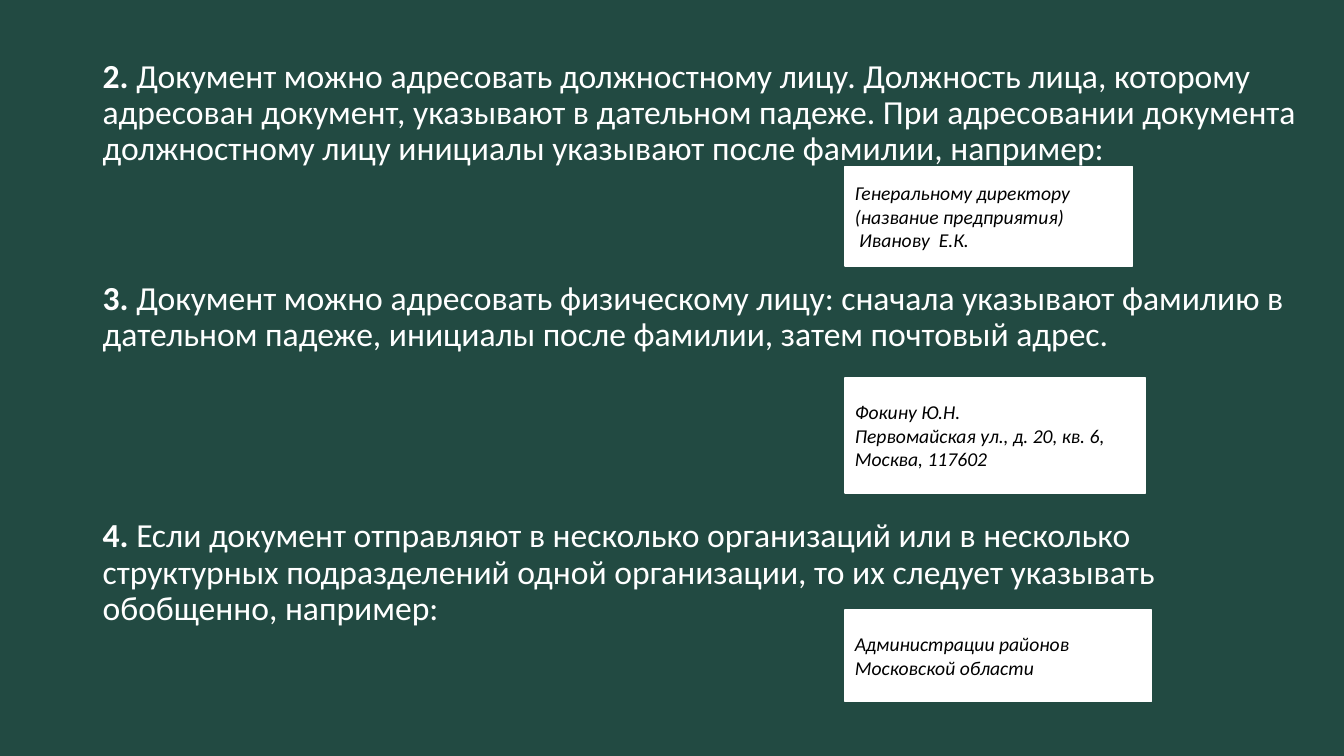
from pptx import Presentation
from pptx.dml.color import RGBColor
from pptx.enum.shapes import MSO_SHAPE
from pptx.enum.text import MSO_ANCHOR, PP_ALIGN
from pptx.util import Inches, Pt

RECT = MSO_SHAPE.RECTANGLE
TOP, MIDDLE = MSO_ANCHOR.TOP, MSO_ANCHOR.MIDDLE
LEFT = PP_ALIGN.LEFT
FONT = "Calibri"
COLORS = {"board": "224A42", "white": "FFFFFF", "black": "000000"}

RULE_2 = ("2.", " Документ можно адресовать должностному лицу. Должность лица, "
          "которому адресован документ, указывают в дательном падеже. "
          "При адресовании документа должностному лицу инициалы указывают "
          "после фамилии, например:")
RULE_3 = ("3.", " Документ можно адресовать физическому лицу: сначала указывают "
          "фамилию в дательном падеже, инициалы после фамилии, затем почтовый адрес.")
RULE_4 = ("4.", " Если документ отправляют в несколько организаций или в несколько "
          "структурных подразделений одной организации, то их следует указывать "
          "обобщенно, например:")

EXAMPLE_LEFT = 8.38
EXAMPLES = [
    (1.65, 2.85, 0.99, "Генеральному директору\n(название предприятия)\n Иванову  Е.К."),
    (3.75, 2.98, 1.14, "Фокину Ю.Н.\nПервомайская ул., д. 20, кв. 6,\nМосква, 117602"),
    (6.05, 3.04, 0.91, "Администрации районов\nМосковской области"),
]


def rgb(name):
    return RGBColor.from_string(COLORS[name])


def style(r, size, color, bold=False, italic=False):
    f = r.font
    f.name, f.size, f.bold, f.italic = FONT, Pt(size), bold, italic
    f.color.rgb = rgb(color)


def add_rules(s, x, y, w, h, rules, anchor, gap=0):
    tf = s.shapes.add_textbox(Inches(x), Inches(y), Inches(w), Inches(h)).text_frame
    tf.word_wrap = True
    tf.vertical_anchor = anchor
    for i, (number, wording) in enumerate(rules):
        p = tf.add_paragraph() if i else tf.paragraphs[0]
        p.line_spacing = 0.9
        p.space_before = Pt(gap if i else 0)
        for text, bold in ((number, True), (wording, False)):
            r = p.add_run()
            r.text = text
            style(r, 24, "white", bold=bold)


def add_example(s, x, y, w, h, text):
    sp = s.shapes.add_shape(RECT, Inches(x), Inches(y), Inches(w), Inches(h))
    sp.shadow.inherit = False
    sp.fill.solid()
    sp.fill.fore_color.rgb = rgb("white")
    sp.line.color.rgb = rgb("white")
    sp.line.width = Pt(1)
    tf = sp.text_frame
    tf.word_wrap = True
    tf.vertical_anchor = MIDDLE
    tf.text = text
    for p in tf.paragraphs:
        p.alignment = LEFT
        for r in p.runs:
            style(r, 14, "black", italic=True)


def main():
    prs = Presentation()
    prs.slide_width, prs.slide_height = Inches(13.33), Inches(7.5)
    s = prs.slides.add_slide(prs.slide_layouts[6])
    s.background.fill.solid()
    s.background.fill.fore_color.rgb = rgb("board")
    add_rules(s, 0.92, 0.4, 12.1, 1.45, [RULE_2], MIDDLE)
    add_rules(s, 0.92, 2.74, 12.1, 4.76, [RULE_3, RULE_4], TOP, gap=118)
    for y, w, h, text in EXAMPLES:
        add_example(s, EXAMPLE_LEFT, y, w, h, text)
    prs.save("out.pptx")


if __name__ == "__main__":
    main()
